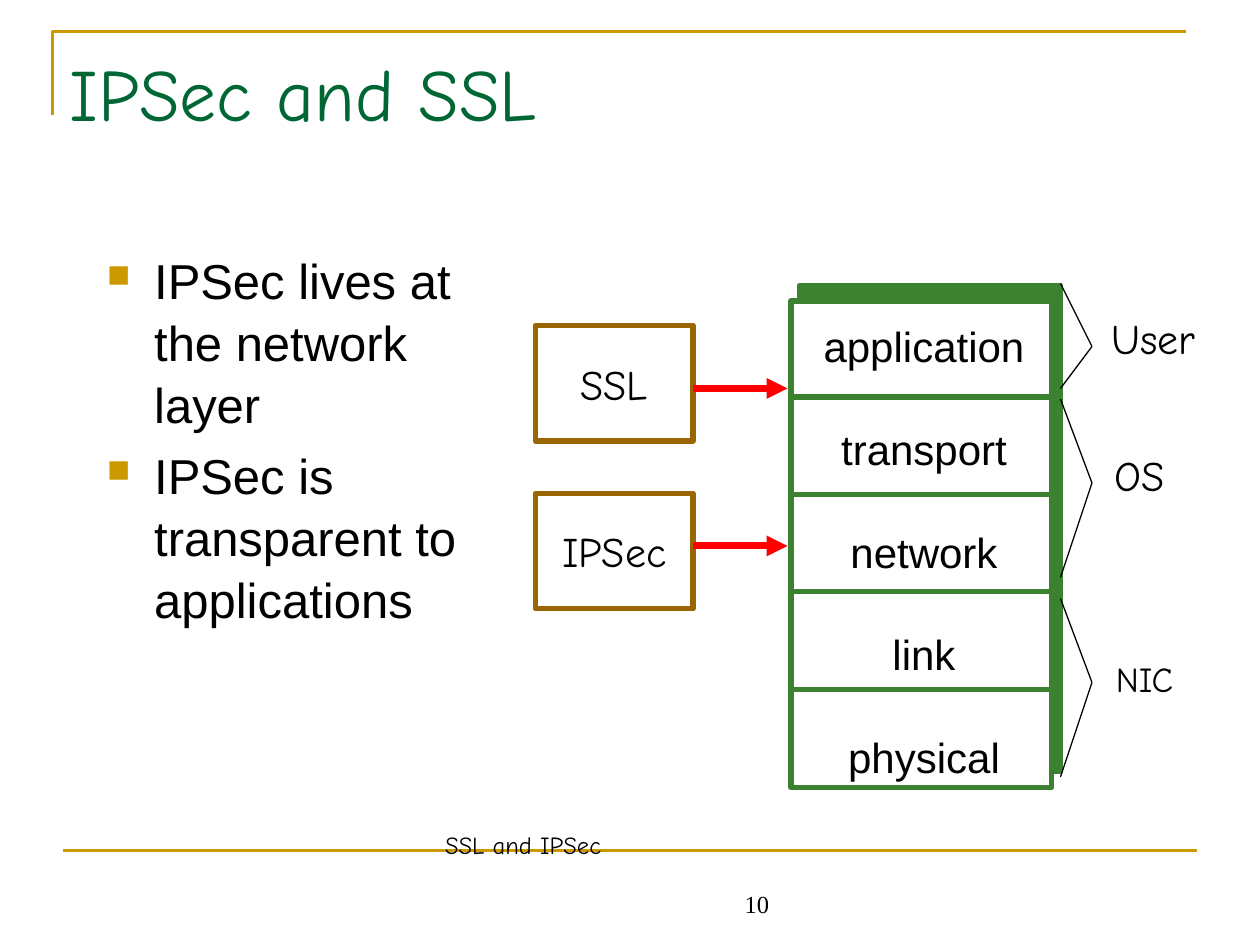
from lxml.etree import SubElement
from pptx import Presentation
from pptx.dml.color import RGBColor
from pptx.enum.shapes import MSO_CONNECTOR, MSO_SHAPE
from pptx.enum.text import MSO_ANCHOR, PP_ALIGN
from pptx.oxml.ns import qn
from pptx.util import Pt

C = {"gold": "CC9900", "title": "006633", "green": "3B812F", "brown": "996600",
     "red": "FF0000", "black": "000000", "white": "FFFFFF"}
HAND, SANS, SERIF = "Comic Neue", "Arial", "Times New Roman"


def write(shape, lines, name, size, color="black", align=PP_ALIGN.LEFT,
          anchor=MSO_ANCHOR.TOP, wrap=True, **para):
    tf = shape.text_frame
    for k, v in {"word_wrap": wrap, "vertical_anchor": anchor}.items():
        setattr(tf, k, v)
    for i, line in enumerate(lines):
        p = tf.paragraphs[0] if i == 0 else tf.add_paragraph()
        for k, v in {"alignment": align, **para}.items():
            setattr(p, k, v)
        r = p.add_run()
        r.text = line
        for k, v in {"name": name, "size": Pt(size), "bold": False}.items():
            setattr(r.font, k, v)
        r.font.color.rgb = RGBColor.from_string(C[color])
    return tf


def connect(x1, y1, x2, y2, color, width, arrow=False):
    c = s.shapes.add_connector(MSO_CONNECTOR.STRAIGHT, Pt(x1), Pt(y1), Pt(x2), Pt(y2))
    c.line.width = Pt(width)
    c.line.color.rgb = RGBColor.from_string(C[color])
    if arrow:
        SubElement(c.line._get_or_add_ln(), qn("a:tailEnd"), type="triangle")
    SubElement(c._element.spPr, qn("a:effectLst"))


prs = Presentation()
prs.slide_width, prs.slide_height = Pt(720), Pt(540)
s = prs.slides.add_slide(prs.slide_layouts[5])

fb = s.shapes.build_freeform(Pt(30), Pt(66))
fb.add_line_segments([(Pt(30), Pt(18)), (Pt(678), Pt(18))], close=False)
sp = fb.convert_to_shape()
sp.shadow.inherit = False
sp.fill.background()
sp.line.width = Pt(1.5)
sp.line.color.rgb = RGBColor.from_string(C["gold"])
connect(36, 486, 684, 486, "gold", 1.5)

title = s.shapes.title
for k, v in {"left": 32.4, "top": 24, "width": 648, "height": 56}.items():
    setattr(title, k, Pt(v))
write(title, ["IPSec and SSL"], HAND, 42, "title")

body = s.shapes.add_textbox(Pt(54), Pt(138), Pt(234), Pt(336))
tf = write(body, ["IPSec lives at the network layer", "IPSec is transparent to applications"],
           SANS, 28, space_before=Pt(5.6), line_spacing=1.05)
for p in tf.paragraphs:
    pPr = p._p.get_or_add_pPr()
    for k, v in {"marL": Pt(27), "indent": Pt(-27)}.items():
        pPr.set(k, str(v))
    SubElement(SubElement(pPr, qn("a:buClr")), qn("a:srgbClr"), val=C["gold"])
    SubElement(pPr, qn("a:buSzPct"), val="65000")
    SubElement(pPr, qn("a:buChar"), char="■")

for x, y, w, h, fill, line, label in [
    (457, 163, 149, 278, "green", "green", None),
    (452, 172, 149, 278, "white", "green", None),
    (306, 186, 90, 66, None, "brown", "SSL"),
    (306, 282, 90, 66, None, "brown", "IPSec"),
]:
    sp = s.shapes.add_shape(MSO_SHAPE.RECTANGLE, Pt(x), Pt(y), Pt(w), Pt(h))
    sp.shadow.inherit = False
    sp.line.width = Pt(3)
    sp.line.color.rgb = RGBColor.from_string(C[line])
    if fill:
        sp.fill.solid()
        sp.fill.fore_color.rgb = RGBColor.from_string(C[fill])
    else:
        sp.fill.background()
    if label:
        write(sp, [label], HAND, 24, align=PP_ALIGN.CENTER, anchor=MSO_ANCHOR.MIDDLE, wrap=False)

layers = s.shapes.add_textbox(Pt(463), Pt(179.5), Pt(130), Pt(266))
write(layers, ["application", "transport", "network", "link", "physical"], SANS, 24,
      align=PP_ALIGN.CENTER, wrap=False, space_before=Pt(30))
for i in range(4):
    y = 226.8 + 55.7 * i
    connect(451.5, y, 600, y, "green", 3)

for y in (222, 312):
    connect(396, y, 450, y, "red", 4, arrow=True)

for label, size, x, y, top, mid, bottom in [
    ("User", 24, 628, 175, 162, 198, 222),
    ("OS", 24, 630, 253.5, 228, 276, 330),
    ("NIC", 20, 630.5, 372, 342, 390, 444),
]:
    connect(606, top, 624, mid, "black", 0.75)
    connect(624, mid, 606, bottom, "black", 0.75)
    write(s.shapes.add_textbox(Pt(x), Pt(y), Pt(68), Pt(41)), [label], HAND, size, wrap=False)

for text, name, x, y, w in [("SSL and IPSec", HAND, 239, 471, 120), ("10", SERIF, 412, 505, 41)]:
    sp = s.shapes.add_textbox(Pt(x), Pt(y), Pt(w), Pt(23))
    write(sp, [text], name, 14, align=PP_ALIGN.CENTER, anchor=MSO_ANCHOR.MIDDLE)

prs.save("out.pptx")
